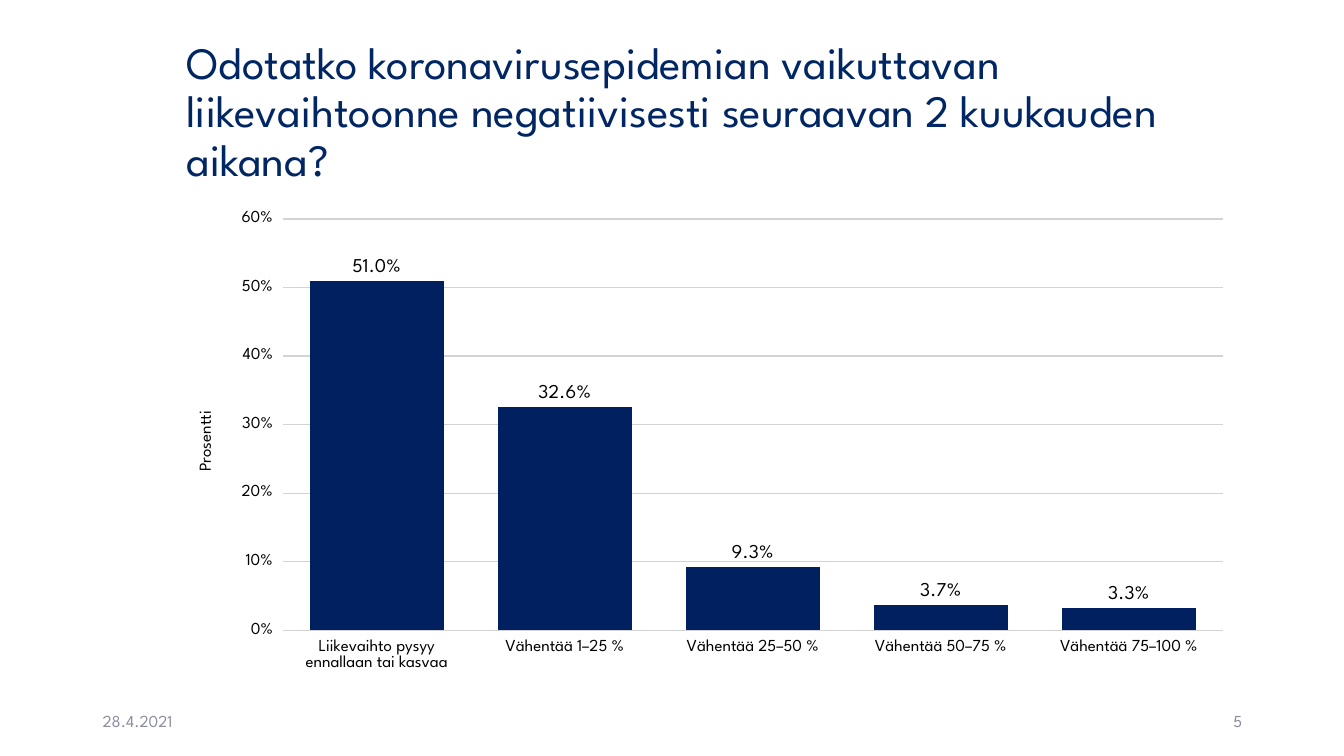
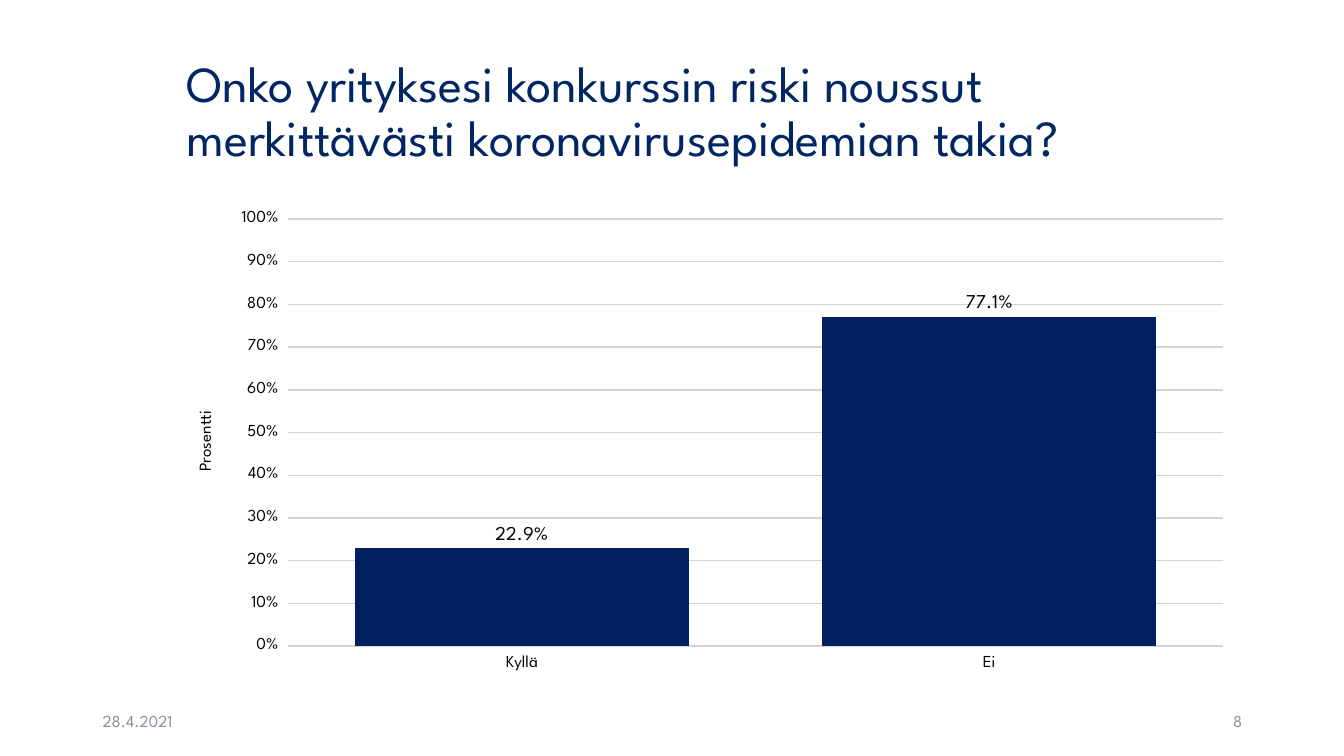
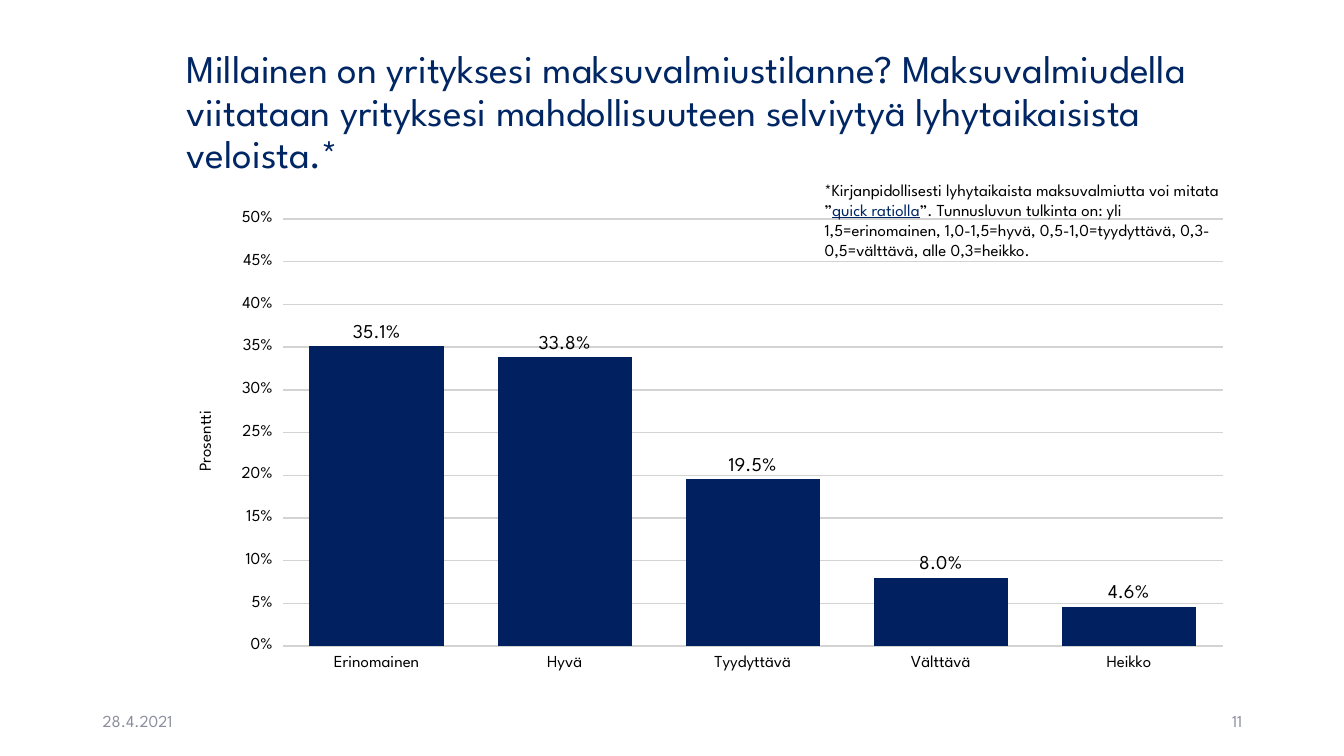
from pptx import Presentation
from pptx import util as u
from pptx.chart.data import CategoryChartData
from pptx.dml.color import RGBColor
from pptx.enum import chart as charts, text

Inches = u.Inches
FONT = "League Spartan"
NAVY, BAR, GRAY, GRID, BLACK, WHITE = "002663", "002060", "8C8E9F", "D3D3D3", "000000", "FFFFFF"

TITLE_BOX = (1.75, 0.4, 10.59, 1.45)
CHART_BOX = (1.75, 2, 10.59, 4.76)
FOOTER_BOX = (0.92, 6.95, 11.5, 0.4)
NOTE_BOX = (8.08, 1.73, 4.28, 0.91)
FOOTER_PART_WIDTH = 3
DATE = "28.4.2021"

SURVEY = [
    {
        "title": "Odotatko koronavirusepidemian vaikuttavan liikevaihtoonne "
                 "negatiivisesti seuraavan 2 kuukauden aikana?",
        "size": 32, "number": 5, "maximum": 0.6, "step": 0.1,
        "answers": {
            "Liikevaihto pysyy ennallaan tai kasvaa": 0.51,
            "Vähentää 1–25 %": 0.326,
            "Vähentää 25–50 %": 0.093,
            "Vähentää 50–75 %": 0.037,
            "Vähentää 75–100 %": 0.033,
        },
    },
    {
        "title": "Onko yrityksesi konkurssin riski noussut merkittävästi "
                 "koronavirusepidemian takia?",
        "size": 36, "number": 8, "maximum": 1, "step": 0.1,
        "answers": {"Kyllä": 0.229, "Ei": 0.771},
    },
    {
        "title": "Millainen on yrityksesi maksuvalmiustilanne? Maksuvalmiudella viitataan "
                 "yrityksesi mahdollisuuteen selviytyä lyhytaikaisista veloista.*",
        "size": 28, "number": 11, "maximum": 0.5, "step": 0.05,
        "answers": {
            "Erinomainen": 0.351,
            "Hyvä": 0.338,
            "Tyydyttävä": 0.195,
            "Välttävä": 0.08,
            "Heikko": 0.046,
        },
        "note": [
            ("*Kirjanpidollisesti lyhytaikaista maksuvalmiutta voi mitata ”", {}),
            ("quick ratiolla", {"color": NAVY, "underline": True}),
            ("”. Tunnusluvun tulkinta on: yli 1,5=erinomainen, 1,0-1,5=hyvä, "
             "0,5-1,0=tyydyttävä, 0,3-0,5=välttävä, alle 0,3=heikko.", {}),
        ],
    },
]


def color(value):
    return RGBColor.from_string(value)


def set_all(target, **values):
    for name, value in values.items():
        setattr(target, name, value)


def format_font(font, size, fill=BLACK, **values):
    set_all(font, name=FONT, size=u.Pt(size), bold=False, **values)
    font.color.rgb = color(fill)


def place(shape, box):
    for name, value in zip(("left", "top", "width", "height"), box):
        setattr(shape, name, Inches(value))


def add_title(slide, box, wording, size):
    title = slide.shapes.title
    place(title, box)
    set_all(title.text_frame, text=wording, word_wrap=True,
            auto_size=text.MSO_AUTO_SIZE.NONE, vertical_anchor=text.MSO_ANCHOR.MIDDLE)
    paragraph = title.text_frame.paragraphs[0]
    set_all(paragraph, alignment=text.PP_ALIGN.LEFT, line_spacing=0.9)
    format_font(paragraph.runs[0].font, size, NAVY)


def add_text(slide, box, runs, fill=BLACK, alignment=text.PP_ALIGN.LEFT,
             anchor=text.MSO_ANCHOR.TOP):
    frame = slide.shapes.add_textbox(*map(Inches, box)).text_frame
    set_all(frame, word_wrap=True, vertical_anchor=anchor)
    paragraph = frame.paragraphs[0]
    paragraph.alignment = alignment
    for wording, style in runs:
        run = paragraph.add_run()
        run.text = wording
        format_font(run.font, 12, style.get("color", fill),
                    underline=style.get("underline", False))


def add_footer(slide, box, number):
    left, top, width, height = box
    right_part = left + width - FOOTER_PART_WIDTH
    for x, wording, alignment in ((left, DATE, text.PP_ALIGN.LEFT),
                                  (right_part, str(number), text.PP_ALIGN.RIGHT)):
        add_text(slide, (x, top, FOOTER_PART_WIDTH, height), [(wording, {})],
                 GRAY, alignment, text.MSO_ANCHOR.MIDDLE)


def add_answer_chart(slide, box, answers, maximum, step):
    data = CategoryChartData(number_format="0.0%")
    data.categories = list(answers)
    data.add_series("Series 1", list(answers.values()))
    chart = slide.shapes.add_chart(charts.XL_CHART_TYPE.COLUMN_CLUSTERED,
                                   *map(Inches, box), data).chart
    set_all(chart, has_legend=False, has_title=False)
    format_font(chart.font, 11)

    for axis in (chart.category_axis, chart.value_axis):
        axis.format.line.fill.background()
        format_font(axis.tick_labels.font, 12)

    value_axis = chart.value_axis
    set_all(value_axis, minimum_scale=0, maximum_scale=maximum, major_unit=step)
    set_all(value_axis.tick_labels, number_format="0%", number_format_is_linked=False)
    gridline = value_axis.major_gridlines.format.line
    gridline.color.rgb = color(GRID)
    gridline.width = u.Pt(1)
    axis_title = value_axis.axis_title.text_frame
    axis_title.text = "Prosentti"
    format_font(axis_title.paragraphs[0].runs[0].font, 12)

    plot = chart.plots[0]
    set_all(plot, gap_width=40, vary_by_categories=False, has_data_labels=True)
    set_all(plot.data_labels, show_value=True, number_format="0.0%",
            number_format_is_linked=False, position=charts.XL_LABEL_POSITION.OUTSIDE_END)
    format_font(plot.data_labels.font, 14)
    fill = plot.series[0].format.fill
    fill.solid()
    fill.fore_color.rgb = color(BAR)


def add_question_slide(presentation, question):
    slide = presentation.slides.add_slide(presentation.slide_layouts[5])
    add_title(slide, TITLE_BOX, question["title"], question["size"])
    add_footer(slide, FOOTER_BOX, question["number"])
    add_answer_chart(slide, CHART_BOX, question["answers"],
                     question["maximum"], question["step"])
    if "note" in question:
        add_text(slide, NOTE_BOX, question["note"])


def main():
    presentation = Presentation()
    set_all(presentation, slide_width=Inches(13.33), slide_height=Inches(7.5))
    background = presentation.slide_master.background.fill
    background.solid()
    background.fore_color.rgb = color(WHITE)
    for question in SURVEY:
        add_question_slide(presentation, question)
    presentation.save("out.pptx")


if __name__ == "__main__":
    main()
